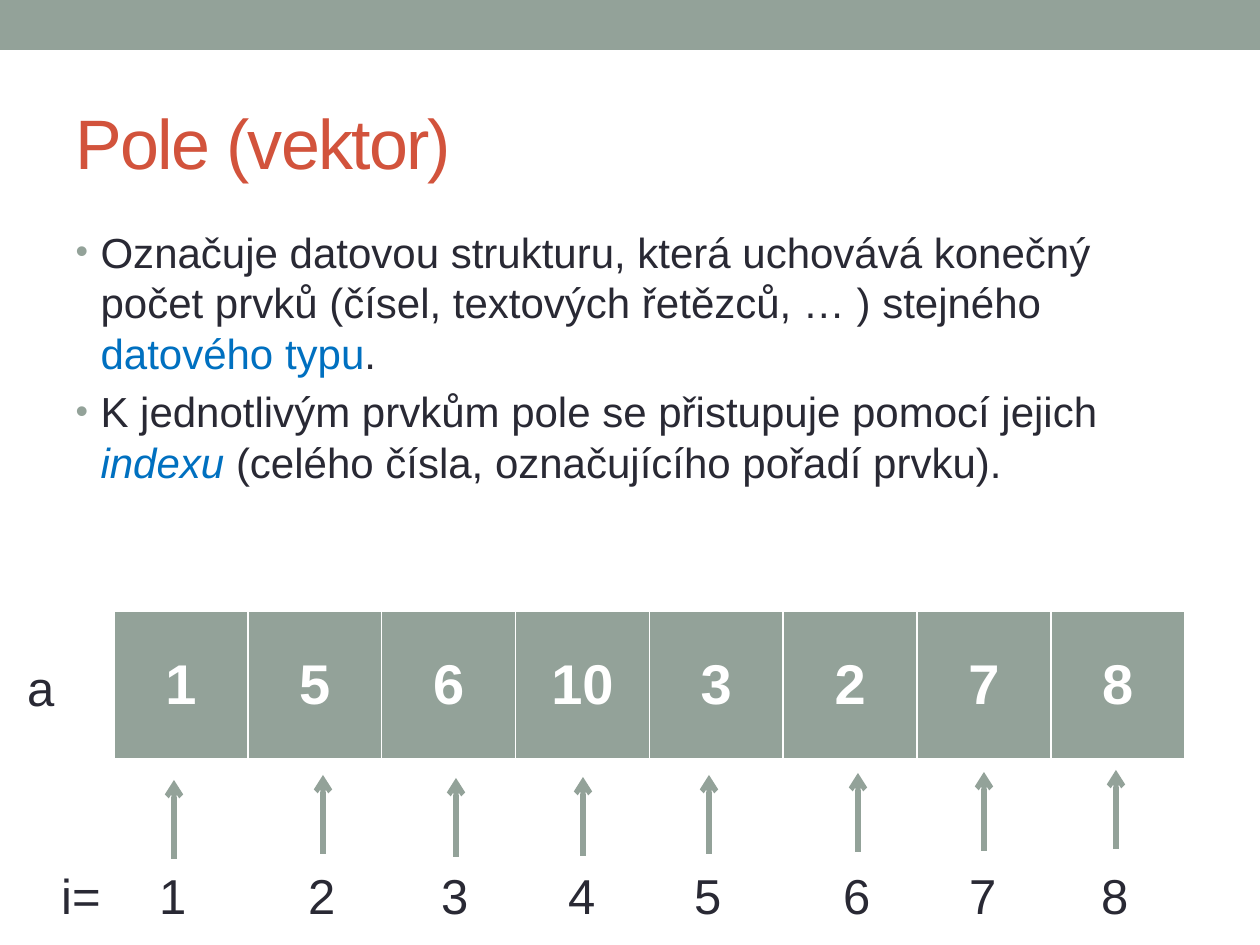
from lxml import etree
from pptx import Presentation
from pptx.dml.color import RGBColor
from pptx.enum.shapes import MSO_CONNECTOR, MSO_SHAPE
from pptx.enum.text import MSO_ANCHOR, MSO_AUTO_SIZE, PP_ALIGN
from pptx.oxml.ns import qn
from pptx.util import Emu, Pt

LEFT, CENTER = PP_ALIGN.LEFT, PP_ALIGN.CENTER
MIDDLE, TOP = MSO_ANCHOR.MIDDLE, MSO_ANCHOR.TOP
PX = 914400 // 126

THEME = {
    "font": "Arial",
    "sage": "93A299",
    "title": {"size": 40, "color": "D2533C"},
    "body": {"size": 24, "color": "292934"},
    "term": {"size": 24, "color": "0070C0"},
    "term_italic": {"size": 24, "color": "0070C0", "italic": True},
    "value": {"size": 32, "color": "FFFFFF", "bold": True},
    "label": {"size": 28, "color": "292934"},
}

TITLE = "Pole (vektor)"
BULLETS = [
    [("Označuje datovou strukturu, která uchovává konečný počet prvků "
      "(čísel, textových řetězců, … ) stejného ", "body"),
     ("datového typu", "term"), (".", "body")],
    [("K jednotlivým prvkům pole se přistupuje pomocí jejich ", "body"),
     ("indexu ", "term_italic"),
     ("(celého čísla, označujícího pořadí prvku).", "body")],
]
VALUES = [1, 5, 6, 10, 3, 2, 7, 8]
# Centre x and lower end y of the arrow for each index
ARROWS = [(174, 859), (323, 854), (456, 857), (583, 856),
          (709, 854), (858, 852), (984, 851), (1116, 849)]
ARROW_LENGTH = 79
INDEX_TOP, INDEX_WIDTH, LABEL_HEIGHT = 859, 59, 72
SIDE_LABELS = [("a", 15, 651, 79), ("i=", 49, INDEX_TOP, 89)]


def px(*lengths):
    return [Emu(length * PX) for length in lengths]


def rgb(color):
    return RGBColor.from_string(color)


def add_run(paragraph, text, style):
    run = paragraph.add_run()
    run.text = text
    formats = {"name": THEME["font"], **THEME[style]}
    run.font.color.rgb = rgb(formats.pop("color"))
    formats["size"] = Pt(formats["size"])
    for attribute, value in formats.items():
        setattr(run.font, attribute, value)
    return run


def place(placeholder, box, anchor):
    placeholder.left, placeholder.top, placeholder.width, placeholder.height = px(*box)
    frame = placeholder.text_frame
    for attribute, value in {"vertical_anchor": anchor, "word_wrap": True,
                             "auto_size": MSO_AUTO_SIZE.NONE}.items():
        setattr(frame, attribute, value)
    return frame


def add_bullet(paragraph):
    properties = paragraph._p.get_or_add_pPr()
    indent = 25 * PX
    properties.set("marL", str(indent))
    properties.set("indent", str(-indent))
    color = etree.SubElement(properties, qn("a:buClr"))
    etree.SubElement(color, qn("a:srgbClr"), val=THEME["sage"])
    etree.SubElement(properties, qn("a:buSzPct"), val="85000")
    etree.SubElement(properties, qn("a:buFont"), typeface=THEME["font"])
    etree.SubElement(properties, qn("a:buChar"), char="•")


def add_label(slide, text, left, top, width, align=LEFT):
    frame = slide.shapes.add_textbox(*px(left, top, width, LABEL_HEIGHT)).text_frame
    frame.word_wrap = True
    frame.paragraphs[0].alignment = align
    add_run(frame.paragraphs[0], text, "label")


def add_arrow(slide, x, bottom):
    arrow = slide.shapes.add_connector(
        MSO_CONNECTOR.STRAIGHT, *px(x, bottom, x, bottom - ARROW_LENGTH))
    arrow.line.color.rgb = rgb(THEME["sage"])
    arrow.line.width = Pt(3)
    etree.SubElement(arrow.line._get_or_add_ln(), qn("a:tailEnd"), type="arrow")
    etree.SubElement(arrow._element.spPr, qn("a:effectLst"))


def add_array(slide):
    table = slide.shapes.add_table(1, len(VALUES), *px(114, 611, 1071, 148)).table
    for cell, value in zip(table.iter_cells(), VALUES):
        cell.fill.solid()
        cell.fill.fore_color.rgb = rgb(THEME["sage"])
        cell.vertical_anchor = MIDDLE
        paragraph = cell.text_frame.paragraphs[0]
        paragraph.alignment = CENTER
        add_run(paragraph, str(value), "value")


def main():
    deck = Presentation()
    deck.slide_width, deck.slide_height = px(1260, 945)
    slide = deck.slides.add_slide(deck.slide_layouts[1])
    title, body = slide.placeholders

    band = slide.shapes.add_shape(MSO_SHAPE.RECTANGLE, *px(0, 0, 1260, 50))
    band.shadow.inherit = False
    band.fill.solid()
    band.fill.fore_color.rgb = rgb(THEME["sage"])
    band.line.fill.background()

    heading = place(title, (63, 73, 1134, 136), MIDDLE).paragraphs[0]
    heading.alignment = LEFT
    heading_run = add_run(heading, TITLE, "title")
    heading_run.font._element.set("spc", "-100")

    frame = place(body, (63, 220, 1134, 672), TOP)
    for number, parts in enumerate(BULLETS):
        paragraph = frame.add_paragraph() if number else frame.paragraphs[0]
        add_bullet(paragraph)
        for text, style in parts:
            add_run(paragraph, text, style)

    add_array(slide)
    for text, left, top, width in SIDE_LABELS:
        add_label(slide, text, left, top, width)
    for index, (x, bottom) in enumerate(ARROWS, start=1):
        add_arrow(slide, x, bottom)
        add_label(slide, str(index), x - INDEX_WIDTH // 2 - 1, INDEX_TOP,
                  INDEX_WIDTH, CENTER)

    deck.save("out.pptx")


if __name__ == "__main__":
    main()
